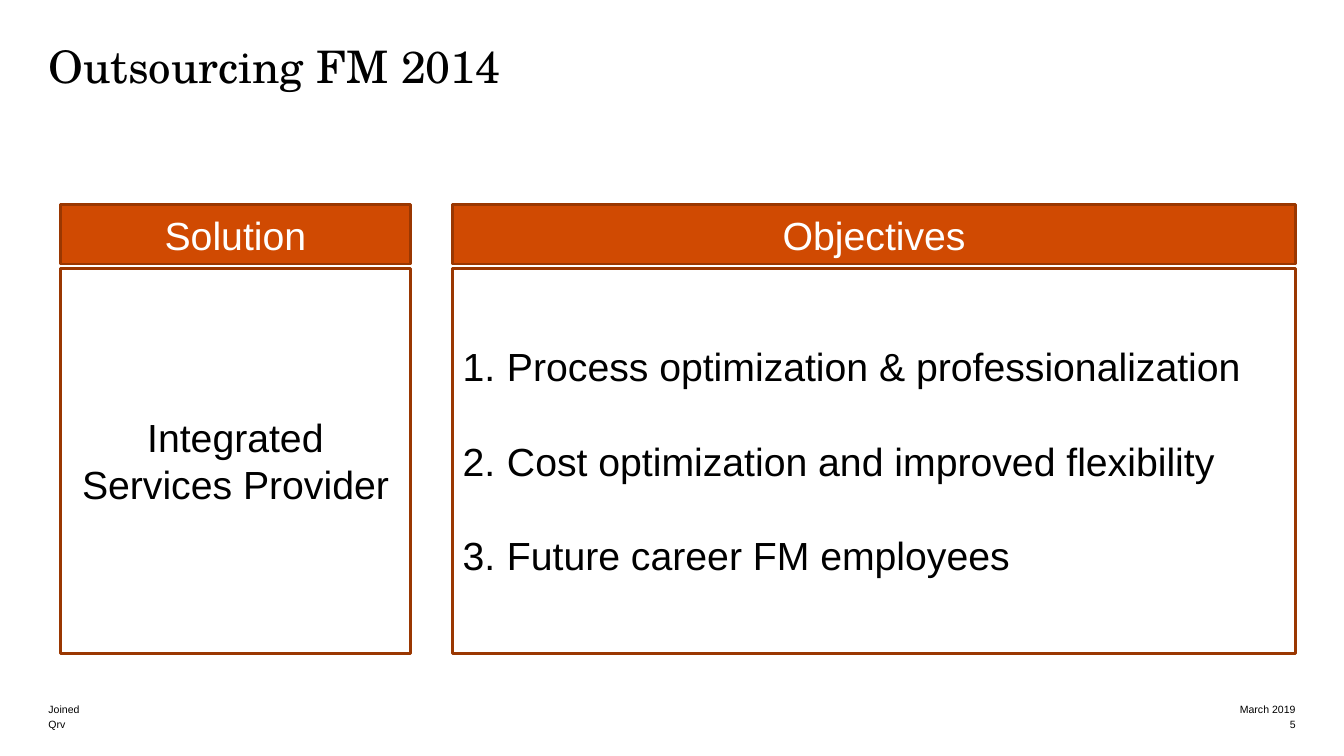
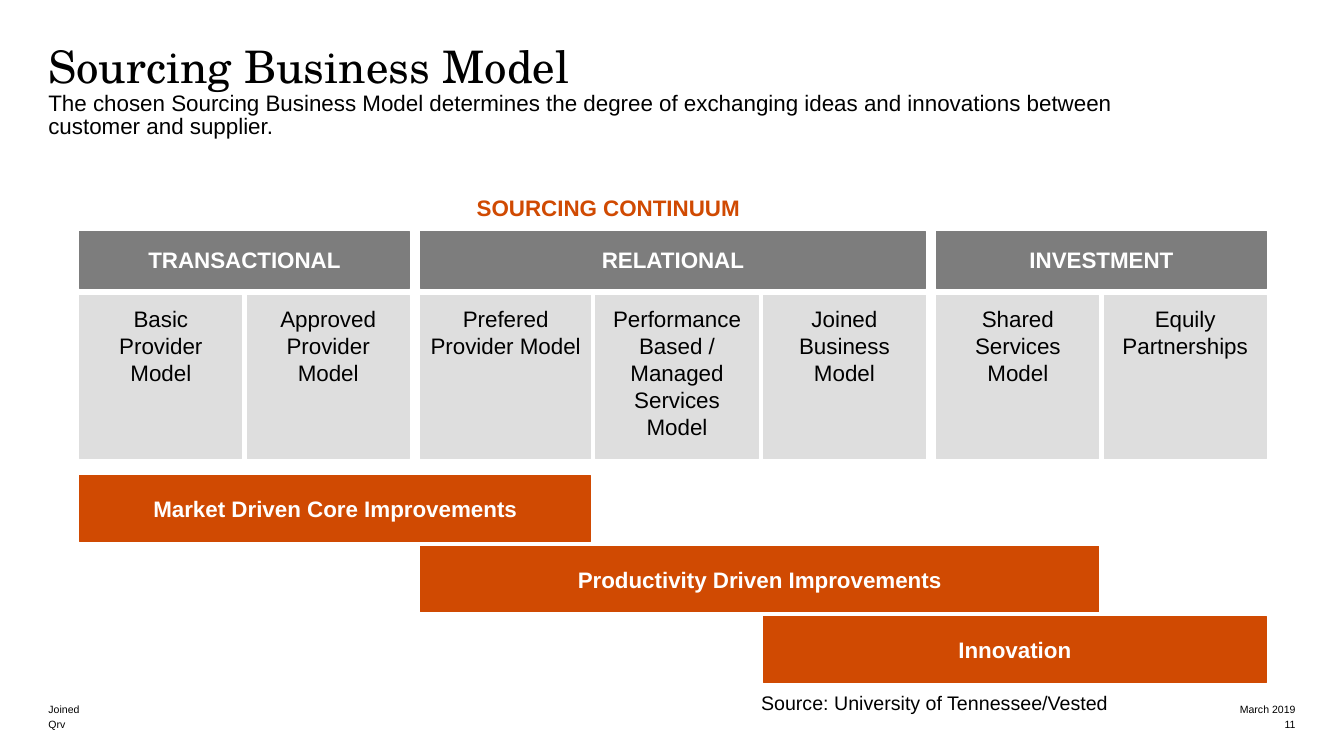
from collections import namedtuple

from lxml.etree import SubElement
from pptx import Presentation
from pptx.dml.color import RGBColor
from pptx.enum.shapes import MSO_SHAPE as Shape
from pptx.enum.text import MSO_ANCHOR as Anchor, PP_ALIGN as Align
from pptx.oxml.ns import qn
from pptx.util import Pt

PX = 9144
ORANGE, RUST = "D04A02", "9A3701"
GREY, PALE = "7D7D7D", "DEDEDE"
BLACK, WHITE = "000000", "FFFFFF"
BODY_FONT, TITLE_FONT = "Arial", "TeX Gyre Schola"

Box = namedtuple("Box", "left top width height")
PAGE = Box(0, 0, 1333, 750)
TITLE = Box(48, 47, 1120, 152)
FOOTER = Box(48, 695, 1237, 30)
PANELS = Box(60, 203, 1225, 445)
CONTINUUM = Box(79, 183, 1177, 493)
SOURCE = Box(745, 681, 370, 34)

OBJECTIVES = [
    "Process optimization & professionalization",
    "Cost optimization and improved flexibility",
    "Future career FM employees",
]
MODEL_GROUPS = [
    ("TRANSACTIONAL", [("Basic Provider Model", 161), ("Approved Provider Model", 161)]),
    ("RELATIONAL", [
        ("Prefered Provider Model", 169),
        ("Performance Based / Managed Services Model", 161),
        ("Joined Business Model", 161),
    ]),
    ("INVESTMENT", [("Shared Services Model", 161), ("Equily Partnerships", 161)]),
]
IMPROVEMENTS = [
    ("Market Driven Core Improvements", 0, 2),
    ("Productivity Driven Improvements", 2, 5),
    ("Innovation", 4, 6),
]


def color(hex_code):
    """Turn a hex string into a colour."""
    return RGBColor.from_string(hex_code)


def emu(box):
    """Turn a box in px into EMU lengths."""
    return [length * PX for length in box]


def write(frame, text, size=16, ink=BLACK, font=BODY_FONT, bold=False,
          align=Align.LEFT, line_spacing=None, before=0, numbered=False):
    """Add one formatted paragraph to a text frame."""
    first = frame.paragraphs[0]
    paragraph = first if not first.runs else frame.add_paragraph()
    if numbered:
        properties = paragraph._p.get_or_add_pPr()
        properties.set("marL", str(44 * PX))
        properties.set("indent", str(-44 * PX))
        SubElement(properties, qn("a:buFont"), typeface=BODY_FONT)
        SubElement(properties, qn("a:buAutoNum"), type="arabicPeriod")
    paragraph.alignment = align
    if line_spacing:
        paragraph.line_spacing = line_spacing
    if before:
        paragraph.space_before = Pt(before)
    run = paragraph.add_run()
    run.text = text
    run.font.name, run.font.size, run.font.bold = font, Pt(size), bold
    run.font.color.rgb = color(ink)


def set_frame(shape, anchor, inset_x, inset_y):
    """Set wrapping, anchor and insets, and return the text frame."""
    frame = shape.text_frame
    frame.word_wrap = True
    frame.vertical_anchor = anchor
    frame.margin_left = frame.margin_right = inset_x * PX
    frame.margin_top = frame.margin_bottom = inset_y * PX
    return frame


def add_label(slide, box, anchor=Anchor.TOP, inset_x=0, inset_y=0):
    """Add a text box and return its frame."""
    return set_frame(slide.shapes.add_textbox(*emu(box)), anchor, inset_x, inset_y)


def add_block(slide, box, fill=None, line=None, weight=0.75,
              anchor=Anchor.MIDDLE, inset_y=10):
    """Add a rectangle and return its text frame."""
    block = slide.shapes.add_shape(Shape.RECTANGLE, *emu(box))
    block.shadow.inherit = False
    if fill:
        block.fill.solid()
        block.fill.fore_color.rgb = color(fill)
    else:
        block.fill.background()
    block.line.color.rgb = color(line or fill)
    block.line.width = Pt(weight)
    return set_frame(block, anchor, 10, inset_y)


def add_title(slide, box, title, subtitle=None):
    """Add the title and an optional subtitle below it."""
    frame = add_label(slide, box)
    write(frame, title, size=32, font=TITLE_FONT, line_spacing=0.85)
    if subtitle:
        write(frame, subtitle, line_spacing=0.85)


def add_footer(slide, box, page_number):
    """Add two footer rows with text at both ends."""
    row_height = box.height // 2
    rows = [("Joined", "March 2019"), ("Qrv", str(page_number))]
    for index, row in enumerate(rows):
        line_box = Box(box.left, box.top + index * row_height, box.width // 2, row_height)
        right_box = line_box._replace(left=box.left + box.width - line_box.width)
        ends = zip(row, (line_box, right_box), (Align.LEFT, Align.RIGHT))
        for text, place, align in ends:
            write(add_label(slide, place, Anchor.BOTTOM), text, size=7.5, align=align)


def add_panel(slide, box, heading):
    """Add a headed panel and return the frame of its body."""
    header_height, body_offset = 59, 63
    body_box = box._replace(top=box.top + body_offset, height=box.height - body_offset)
    body = add_block(slide, body_box, line=RUST, weight=2, inset_y=5)
    header = add_block(slide, box._replace(height=header_height), ORANGE, RUST, 2, inset_y=5)
    write(header, heading, size=28, ink=WHITE, align=Align.CENTER)
    return body


def add_panels(slide, box):
    """Place the solution beside its objectives."""
    solution_width, gap = 347, 42
    offset = solution_width + gap
    solution = add_panel(slide, box._replace(width=solution_width), "Solution")
    write(solution, "Integrated Services Provider", size=28, align=Align.CENTER)
    objectives_box = box._replace(left=box.left + offset, width=box.width - offset)
    objectives = add_panel(slide, objectives_box, "Objectives")
    for index, objective in enumerate(OBJECTIVES):
        write(objectives, objective, size=28, before=34 if index else 0, numbered=True)


def add_continuum(slide, box):
    """Place the model groups, their models and the improvement bars."""
    model_gap, group_gap = 5, 11
    heading_box = Box(box.left + 384, box.top, 328, 47)
    write(add_label(slide, heading_box, inset_x=10, inset_y=10),
          "SOURCING CONTINUUM", ink=ORANGE, bold=True)

    columns = []
    left = box.left
    for group, models in MODEL_GROUPS:
        group_left = left
        for model, width in models:
            model_box = Box(left, box.top + 110, width, 162)
            write(add_block(slide, model_box, PALE, anchor=Anchor.TOP),
                  model, align=Align.CENTER)
            columns.append(model_box)
            left += width + model_gap
        group_box = Box(group_left, box.top + 47, left - model_gap - group_left, 56)
        write(add_block(slide, group_box, GREY), group,
              ink=WHITE, bold=True, align=Align.CENTER)
        left += group_gap - model_gap

    bar_height, bar_step = 65, 70
    for index, (improvement, first, last) in enumerate(IMPROVEMENTS):
        start = columns[first].left
        end = columns[last].left + columns[last].width
        bar_box = Box(start, box.top + 289 + index * bar_step, end - start, bar_height)
        write(add_block(slide, bar_box, ORANGE), improvement,
              ink=WHITE, bold=True, align=Align.CENTER)


def outsourcing_slide(slide):
    """Build the slide on outsourcing."""
    add_title(slide, TITLE, "Outsourcing FM 2014")
    add_panels(slide, PANELS)
    add_footer(slide, FOOTER, 5)


def sourcing_slide(slide):
    """Build the slide on the sourcing business model."""
    add_title(slide, TITLE, "Sourcing Business Model",
              "The chosen Sourcing Business Model determines the degree of exchanging "
              "ideas and innovations between customer and supplier.")
    add_continuum(slide, CONTINUUM)
    write(add_label(slide, SOURCE, inset_x=10, inset_y=5),
          "Source: University of Tennessee/Vested", size=14)
    add_footer(slide, FOOTER, 11)


def main():
    """Build and save the presentation."""
    deck = Presentation()
    deck.slide_width, deck.slide_height = PAGE.width * PX, PAGE.height * PX
    blank = deck.slide_layouts[6]
    for build in (outsourcing_slide, sourcing_slide):
        build(deck.slides.add_slide(blank))
    deck.save("out.pptx")


if __name__ == "__main__":
    main()
